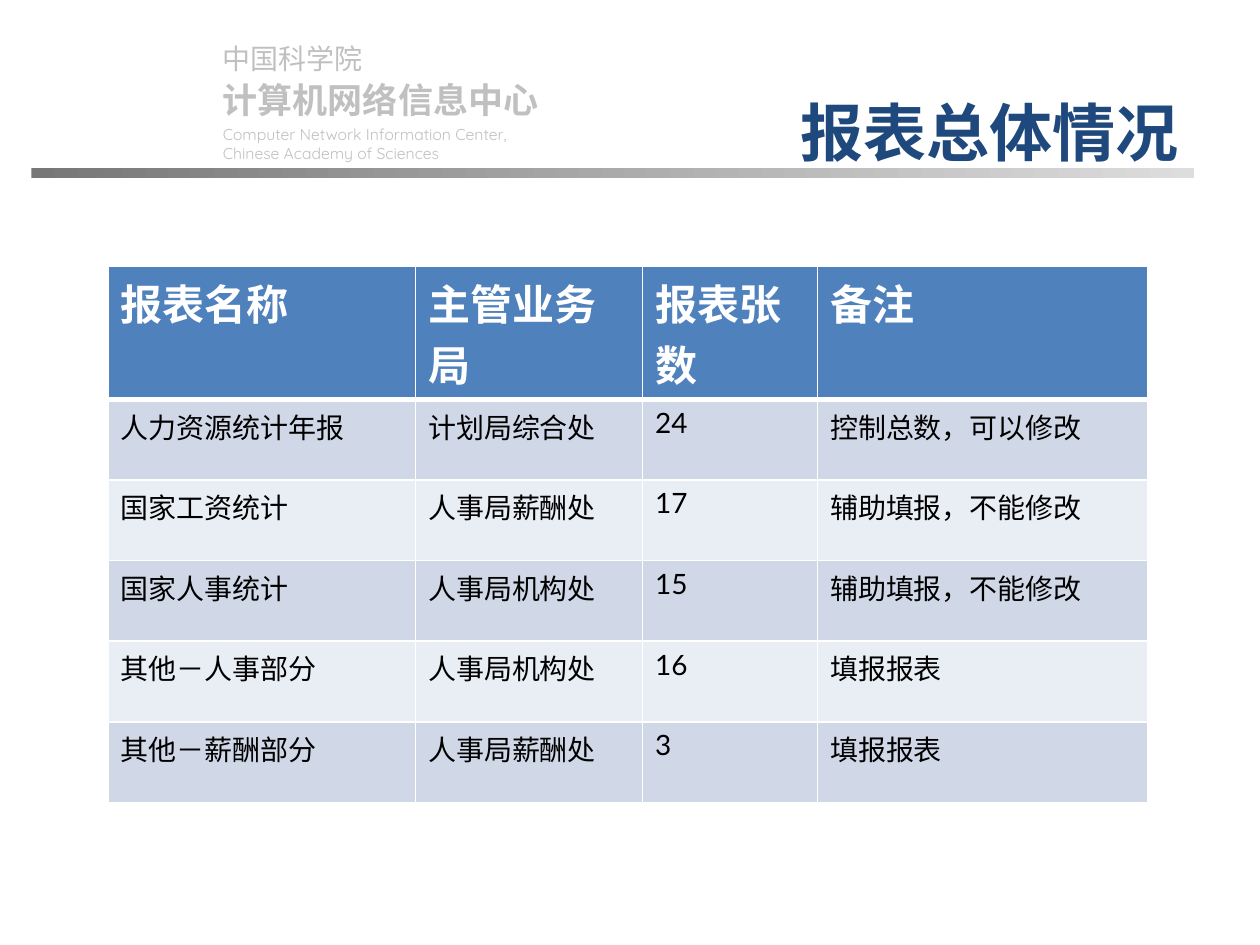
import pptx
import pptx.util
import pptx.dml.color
import pptx.enum.shapes
import pptx.enum.text
import pptx.oxml
import pptx.oxml.ns
from pptx.util import Inches, Pt
from dataclasses import dataclass


@dataclass(frozen=True)
class Theme:
    navy: str = "1F497D"
    blue: str = "4F81BD"
    bands: tuple = ("D0D8E8", "E9EDF4")
    white: str = "FFFFFF"
    black: str = "000000"
    grey: str = "C0C0C0"
    rule: tuple = ("777777", "DDDDDD")
    body: str = "Lato"
    big: int = 36
    head: int = 24
    text: int = 16
    thin: int = 1
    thick: int = 3


theme = Theme()
wide, high = 10, 7.5

title = "报表总体情况"
# text, size, font, bold, line spacing
owner = [
    ("中国科学院", 16, theme.body, False, 1.1),
    ("计算机网络信息中心", 20, theme.body, True, 1.1),
    ("Computer Network Information Center,", 9, "Quicksand", False, 1.2),
    ("Chinese Academy of Sciences", 9, "Quicksand", False, 1.0),
]
reports = [
    ("报表名称", "主管业务局", "报表张数", "备注"),
    ("人力资源统计年报", "计划局综合处", "24", "控制总数，可以修改"),
    ("国家工资统计", "人事局薪酬处", "17", "辅助填报，不能修改"),
    ("国家人事统计", "人事局机构处", "15", "辅助填报，不能修改"),
    ("其他－人事部分", "人事局机构处", "16", "填报报表"),
    ("其他－薪酬部分", "人事局薪酬处", "3", "填报报表"),
]
cols = (2.44, 1.8, 1.39, 2.62)
rows = [1.06] + [0.64] * (len(reports) - 1)


def rgb(code):
    return pptx.dml.color.RGBColor.from_string(code)


def box(left, top, width, height):
    return [Inches(n) for n in (left, top, width, height)]


def write(para, text, size, color, font, bold=False):
    run = para.add_run()
    run.text = text
    run.font.size = Pt(size)
    run.font.name = font
    run.font.bold = bold
    run.font.color.rgb = rgb(color)


def add_rule(slide):
    bar = slide.shapes.add_shape(
        pptx.enum.shapes.MSO_SHAPE.RECTANGLE, *box(0.25, 1.33, 9.23, 0.08))
    bar.shadow.inherit = False
    bar.line.fill.background()
    bar.fill.gradient()
    bar.fill.gradient_angle = 0
    for stop, code in zip(bar.fill.gradient_stops, theme.rule):
        stop.color.rgb = rgb(code)


def add_owner(slide):
    frame = slide.shapes.add_textbox(*box(1.67, 0.25, 2.83, 1.09)).text_frame
    frame.word_wrap = True
    frame.auto_size = pptx.enum.text.MSO_AUTO_SIZE.SHAPE_TO_FIT_TEXT
    for i, (text, size, font, bold, gap) in enumerate(owner):
        para = frame.add_paragraph() if i else frame.paragraphs[0]
        para.line_spacing = gap
        write(para, text, size, theme.grey, font, bold)


def set_title(slide):
    shape = slide.shapes.title
    shape.left, shape.top, shape.width, shape.height = box(1.17, 0.47, 8.28, 0.92)
    frame = shape.text_frame
    frame.vertical_anchor = pptx.enum.text.MSO_ANCHOR.BOTTOM
    para = frame.paragraphs[0]
    para.alignment = pptx.enum.text.PP_ALIGN.RIGHT
    write(para, title, theme.big, theme.navy, "Calibri", True)


def set_edges(cell, top, bottom):
    """Draw the cell's borders; the schema wants them ahead of the fill."""
    props = cell._tc.get_or_add_tcPr()
    sides = (("L", theme.thin), ("R", theme.thin), ("T", top), ("B", bottom))
    for i, (side, width) in enumerate(sides):
        props.insert(i, pptx.oxml.parse_xml(
            f'<a:ln{side} {pptx.oxml.ns.nsdecls("a")} w="{Pt(width)}">'
            f'<a:solidFill><a:srgbClr val="{theme.white}"/></a:solidFill>'
            f'</a:ln{side}>'))


def add_reports(slide):
    table = slide.shapes.add_table(
        len(rows), len(cols), *box(0.86, 2.11, sum(cols), sum(rows))).table
    for col, width in zip(table.columns, cols):
        col.width = Inches(width)
    for r, line in enumerate(reports):
        table.rows[r].height = Inches(rows[r])
        if r:
            fill, size, color = theme.bands[(r - 1) % 2], theme.text, theme.black
        else:
            fill, size, color = theme.blue, theme.head, theme.white
        top = theme.thick if r == 1 else theme.thin
        bottom = theme.thick if r == 0 else theme.thin
        for c, text in enumerate(line):
            cell = table.cell(r, c)
            cell.fill.solid()
            cell.fill.fore_color.rgb = rgb(fill)
            set_edges(cell, top, bottom)
            para = cell.text_frame.paragraphs[0]
            para.alignment = pptx.enum.text.PP_ALIGN.LEFT
            write(para, text, size, color, theme.body, r == 0)


def main():
    deck = pptx.Presentation()
    deck.slide_width, deck.slide_height = Inches(wide), Inches(high)
    slide = deck.slides.add_slide(deck.slide_layouts[5])
    add_rule(slide)
    add_owner(slide)
    set_title(slide)
    add_reports(slide)
    deck.save("out.pptx")


if __name__ == "__main__":
    main()
